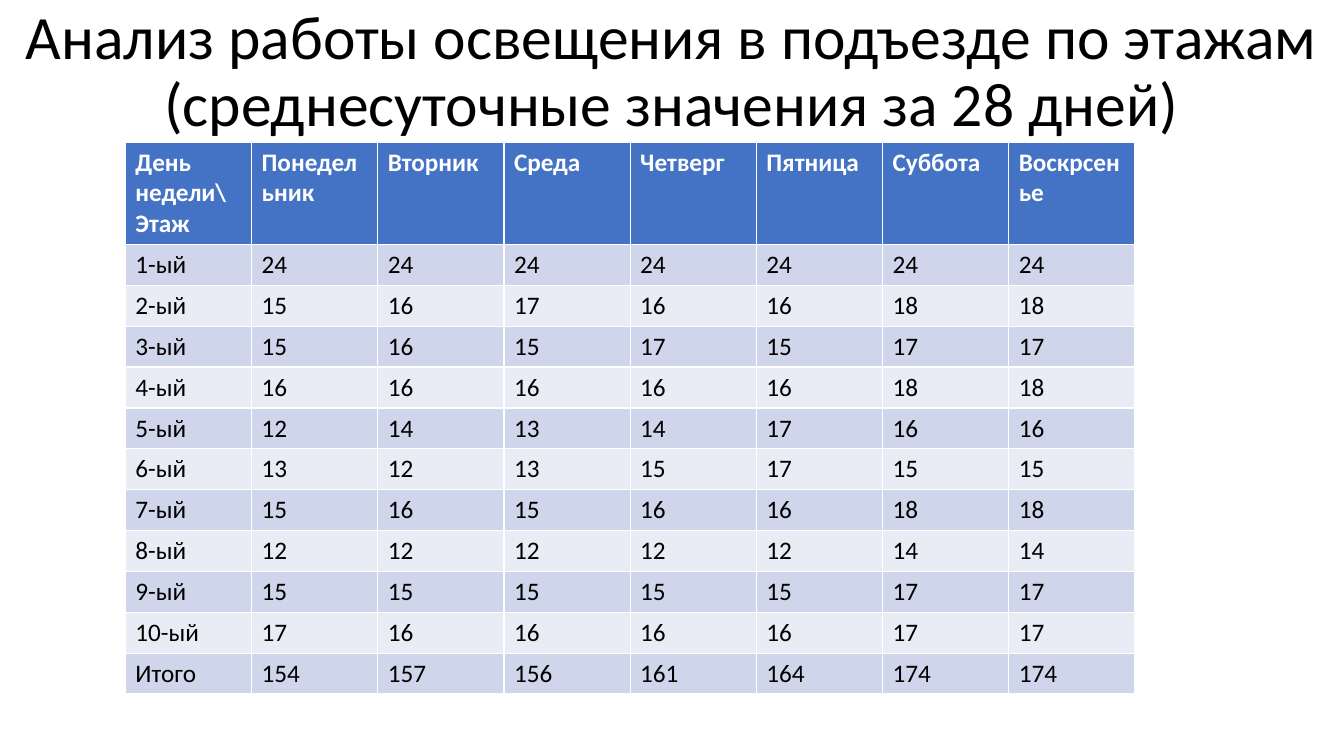
from pptx import Presentation
from pptx.dml.color import RGBColor
from pptx.enum.text import MSO_ANCHOR, MSO_AUTO_SIZE, PP_ALIGN
from pptx.util import Cm, Pt

HUES = {"ink": "000000", "head": "4472C4", "white": "FFFFFF",
        "dark": "CFD5EA", "light": "E9EBF5"}
TITLE = ("Анализ работы освещения в подъезде по этажам "
         "(среднесуточные значения за 28 дней)")
DAYS = ["День недели\\ Этаж", "Понедельник", "Вторник", "Среда",
        "Четверг", "Пятница", "Суббота", "Воскрсенье"]
HOURS = [
    [24, 24, 24, 24, 24, 24, 24],
    [15, 16, 17, 16, 16, 18, 18],
    [15, 16, 15, 17, 15, 17, 17],
    [16, 16, 16, 16, 16, 18, 18],
    [12, 14, 13, 14, 17, 16, 16],
    [13, 12, 13, 15, 17, 15, 15],
    [15, 16, 15, 16, 16, 18, 18],
    [12, 12, 12, 12, 12, 14, 14],
    [15, 15, 15, 15, 15, 17, 17],
    [17, 16, 16, 16, 16, 17, 17],
]


def style(para, size, hue, bold=False):
    """Format every run of a paragraph."""
    for run in para.runs:
        run.font.name = "Calibri"
        run.font.size = Pt(size)
        run.font.bold = bold
        run.font.color.rgb = RGBColor.from_string(HUES[hue])


def add_title(slide, left, top, width, height):
    """Place the heading in the given box."""
    title = slide.shapes.title
    title.left, title.top = Cm(left), Cm(top)
    title.width, title.height = Cm(width), Cm(height)
    frame = title.text_frame
    frame.text = TITLE
    frame.word_wrap = True
    frame.auto_size = MSO_AUTO_SIZE.NONE
    frame.vertical_anchor = MSO_ANCHOR.MIDDLE
    para = frame.paragraphs[0]
    para.alignment = PP_ALIGN.CENTER
    para.line_spacing = 0.9
    style(para, 44, "ink")


def add_grid(slide, left, top, width, height, head):
    """Place the table of floors by weekday, with column totals."""
    floors = [[f"{num}-ый", *row] for num, row in enumerate(HOURS, 1)]
    total = ["Итого", *map(sum, zip(*HOURS))]
    rows = [DAYS, *floors, total]
    table = slide.shapes.add_table(len(rows), len(DAYS), Cm(left), Cm(top),
                                   Cm(width), Cm(height)).table
    for col in table.columns:
        col.width = Cm(width / len(DAYS))
    for i, row in enumerate(rows):
        table.rows[i].height = Cm((height - head) / (len(rows) - 1) if i else head)
        fill = ("dark" if i % 2 else "light") if i else "head"
        for j, value in enumerate(row):
            cell = table.cell(i, j)
            cell.fill.solid()
            cell.fill.fore_color.rgb = RGBColor.from_string(HUES[fill])
            cell.text_frame.text = str(value)
            style(cell.text_frame.paragraphs[0], 18,
                  "ink" if i else "white", bold=i == 0)


def main():
    """Build and save the slide."""
    deck = Presentation()
    deck.slide_width, deck.slide_height = Cm(33.87), Cm(19.05)
    slide = deck.slides.add_slide(deck.slide_layouts[5])
    add_title(slide, 0, 0, 33.87, 3.68)
    add_grid(slide, 3.16, 3.58, 25.44, 13.87, head=2.54)
    deck.save("out.pptx")


if __name__ == "__main__":
    main()
